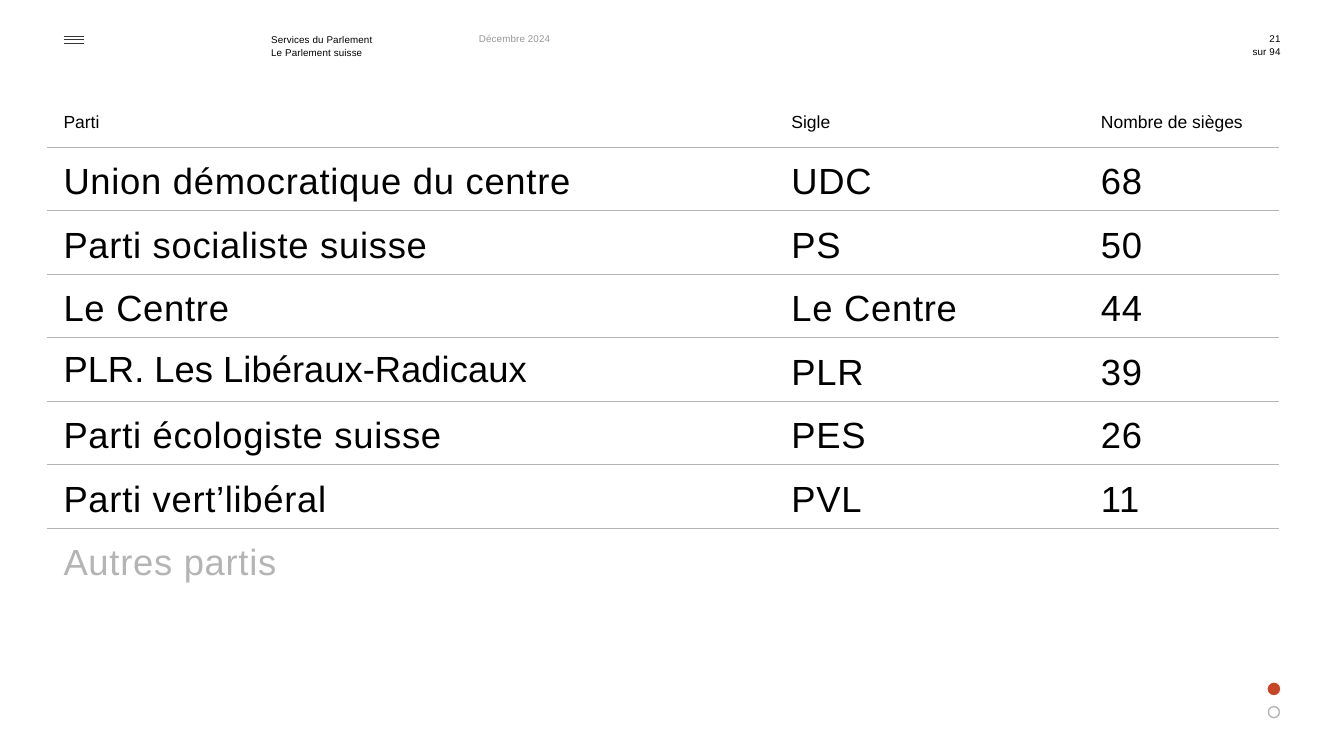
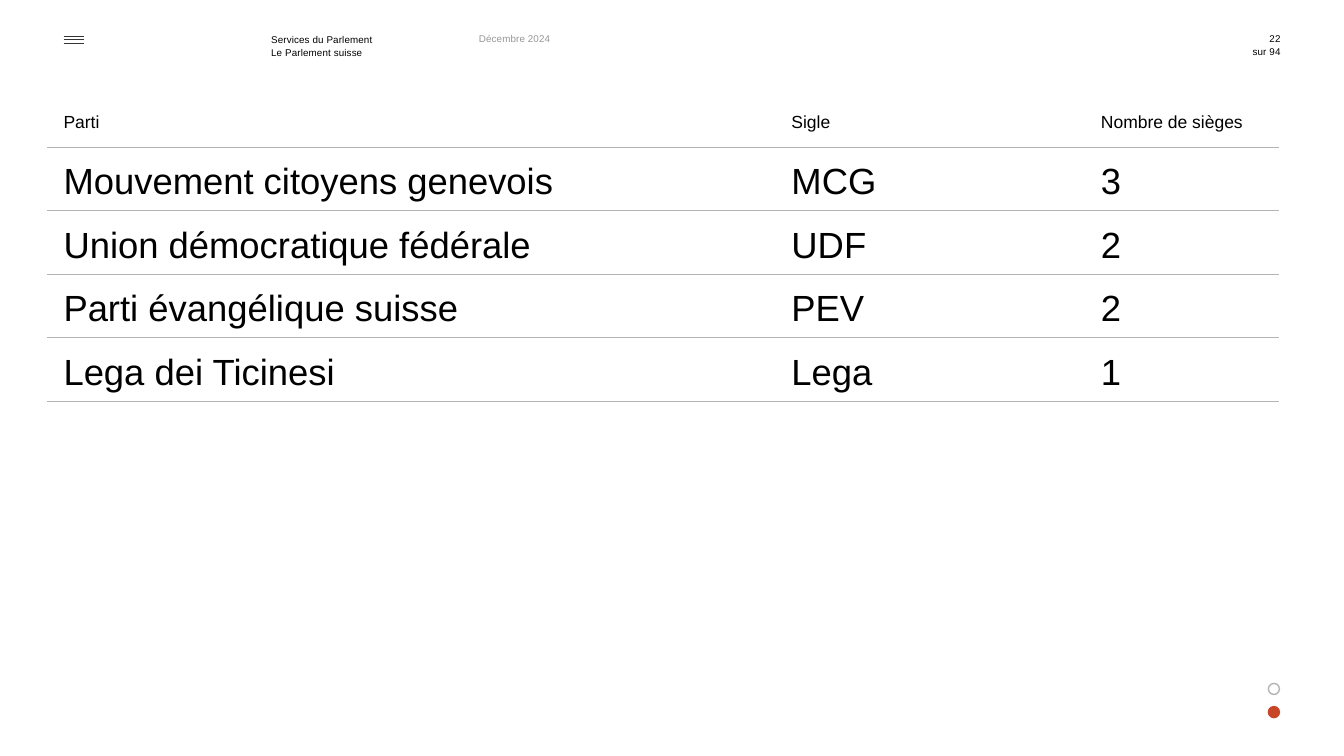
import pptx
import pptx.dml.color
import pptx.enum.shapes
import pptx.enum.text
import pptx.oxml
import pptx.oxml.ns
import pptx.util
from lxml import etree

Inches = pptx.util.Inches
Pt = pptx.util.Pt
RIGHT = pptx.enum.text.PP_ALIGN.RIGHT
BLACK, DARK, GREY, PALE, RED = "000000", "343434", "969696", "B4B4B4", "C84628"
PLAIN = "{2D5ABB26-0587-4C30-8999-92F81FD0307C}"
COLS = (7.22, 3.07, 1.93)
HEAD = ("Parti", "Sigle", "Nombre de sièges")
MAIN = (
    ("Union démocratique du centre", "UDC", "68"),
    ("Parti socialiste suisse", "PS", "50"),
    ("Le Centre", "Le Centre", "44"),
    ("PLR. Les Libéraux-Radicaux", "PLR", "39"),
    ("Parti écologiste suisse", "PES", "26"),
    ("Parti vert’libéral", "PVL", "11"),
    ("Autres partis", "", ""),
)
SMALL = (
    ("Mouvement citoyens genevois", "MCG", "3"),
    ("Union démocratique fédérale", "UDF", "2"),
    ("Parti évangélique suisse", "PEV", "2"),
    ("Lega dei Ticinesi", "Lega", "1"),
)


def color(code):
    """Turn a hex string into a colour."""
    return pptx.dml.color.RGBColor.from_string(code)


def apply(item, values):
    """Set each attribute given in a dict."""
    for name, value in values.items():
        setattr(item, name, value)


def write(para, text, size, code, space=0, **form):
    """Write one styled run into a paragraph."""
    apply(para, form)
    run = para.add_run()
    run.text = text
    apply(run.font, {"size": Pt(size), "name": "Arial"})
    run.font.color.rgb = color(code)
    if space:
        run.font._element.set("spc", str(round(space * 100)))


def label(slide, left, top, width, height, lines, code=BLACK, **form):
    """Add a small text box with one paragraph per line."""
    box = slide.shapes.add_textbox(*map(Inches, (left, top, width, height)))
    frame = box.text_frame
    apply(frame, {"word_wrap": True, "margin_left": 0, "margin_right": 0,
                  "margin_top": 0, "margin_bottom": 0})
    for index, line in enumerate(lines):
        para = frame.add_paragraph() if index else frame.paragraphs[0]
        write(para, line, 7, code, 0.1, **form)


def menu(slide):
    """Draw the three short menu lines."""
    group = slide.shapes.add_group_shape()
    for top in (0.36, 0.39, 0.43):
        line = group.shapes.add_connector(
            pptx.enum.shapes.MSO_CONNECTOR.STRAIGHT,
            *map(Inches, (0.63, top, 0.83, top)))
        line.line.color.rgb = color(DARK)
        line.line.width = Pt(0.4)
        props = line._element.spPr
        etree.SubElement(props, pptx.oxml.ns.qn("a:effectLst"))


def dots(slide, active):
    """Draw the page dots with the active one in red."""
    group = slide.shapes.add_group_shape()
    for index in range(2):
        dot = group.shapes.add_shape(
            pptx.enum.shapes.MSO_SHAPE.OVAL,
            *map(Inches, (12.58, 6.78 + 0.23 * index, 0.11, 0.11)))
        dot.shadow.inherit = False
        if index == active:
            dot.fill.solid()
            dot.fill.fore_color.rgb = color(RED)
        else:
            dot.fill.background()
        dot.line.color.rgb = color(RED if index == active else PALE)
        dot.line.width = Pt(1)


def rule(cell):
    """Draw the thin line below a cell."""
    space = pptx.oxml.ns.nsdecls("a")
    line = pptx.oxml.parse_xml(
        f'<a:lnB {space} w="6350"><a:solidFill><a:srgbClr val="{PALE}"/>'
        '</a:solidFill><a:prstDash val="solid"/></a:lnB>')
    cell._tc.get_or_add_tcPr().insert(0, line)


def fill(cell, text, head, code, space, form):
    """Set the margins and text of one cell."""
    names = ("margin_left", "margin_top", "margin_right", "margin_bottom")
    sizes = (0.16, 0.05, 0.1, 0.05) if head else (0.16, 0.12, 0.08, 0)
    apply(cell, dict(zip(names, map(Inches, sizes))))
    cell.fill.background()
    if text:
        write(cell.text_frame.paragraphs[0], text, 12.5 if head else 26,
              code, space, **form)


def grid(slide, rows, space, tight):
    """Add the table of parties and seats."""
    data = (HEAD,) + rows
    high = [0.39] + [0.63] * len(rows)
    table = slide.shapes.add_table(
        len(data), len(COLS),
        *map(Inches, (0.47, 1.07, sum(COLS), sum(high)))).table
    apply(table, {"first_row": False, "horz_banding": False})
    table._tbl.tblPr.find(pptx.oxml.ns.qn("a:tableStyleId")).text = PLAIN
    for col, width in zip(table.columns, COLS):
        col.width = Inches(width)
    for index, row in enumerate(data):
        table.rows[index].height = Inches(high[index])
        full = all(row)
        for spot, text in enumerate(row):
            cell = table.cell(index, spot)
            plain = index == 0 or text == tight
            form = {} if plain else {"line_spacing": 1.07}
            fill(cell, text, index == 0, BLACK if full else PALE,
                 0 if plain else space, form)
            if full:
                rule(cell)


def page(deck, number, active, rows, space=0, tight=None):
    """Build one slide with its header, table and dots."""
    slide = deck.slides.add_slide(deck.slide_layouts[6])
    menu(slide)
    label(slide, 2.69, 0.32, 1.3, 0.25,
          ("Services du Parlement", "Le Parlement suisse"), line_spacing=1.1)
    label(slide, 4.75, 0.32, 1.21, 0.12, ("Décembre 2024",), GREY)
    for top, text in ((0.32, number), (0.45, "sur 94")):
        label(slide, 12.26, top, 0.44, 0.12, (text,), alignment=RIGHT)
    grid(slide, rows, space, tight)
    dots(slide, active)


def main():
    """Build and save the deck."""
    deck = pptx.Presentation()
    apply(deck, {"slide_width": Inches(13.33), "slide_height": Inches(7.5)})
    page(deck, "21", 0, MAIN, 0.5, "PLR. Les Libéraux-Radicaux")
    page(deck, "22", 1, SMALL)
    deck.save("out.pptx")


if __name__ == "__main__":
    main()
